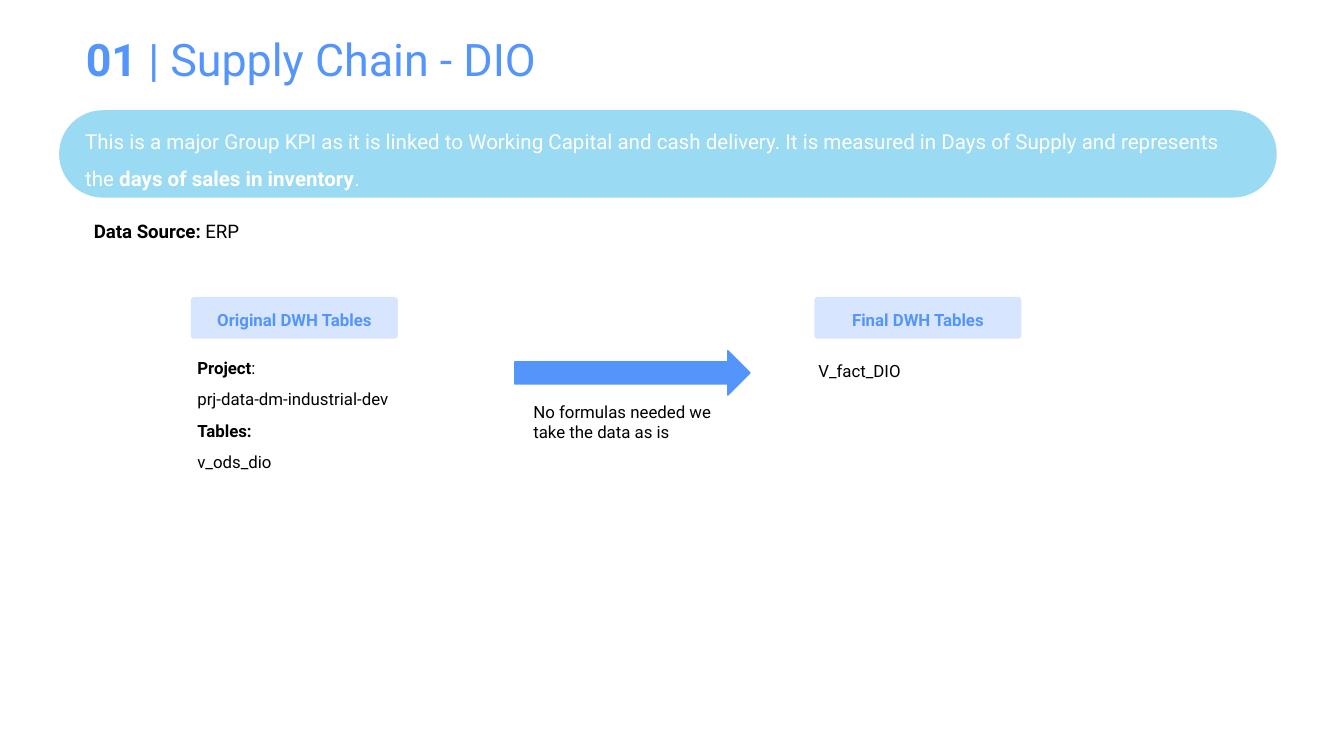
import pptx
import pptx.util
import pptx.dml.color
import pptx.enum.shapes
import pptx.enum.text
import pptx.oxml.ns
import lxml.etree
from pptx.util import Inches

BLUE, SKY, BLACK, WHITE = "5495FC", "81D1F0", "000000", "FFFFFF"
SHAPES = pptx.enum.shapes.MSO_SHAPE
MIDDLE = pptx.enum.text.MSO_ANCHOR.MIDDLE
ALIGN = pptx.enum.text.PP_ALIGN


def paint(color_format, color):
    """Set a colour from a hex string."""
    color_format.rgb = pptx.dml.color.RGBColor.from_string(color)


def write(box, paragraphs, size, color, inset=0.1, anchor=None, **layout):
    """Fill a box; each paragraph is a list of (text, bold) spans."""
    frame = box.text_frame
    frame_format = {"word_wrap": True, "vertical_anchor": anchor,
                    "margin_left": Inches(0.1), "margin_right": Inches(0.1),
                    "margin_top": Inches(inset), "margin_bottom": Inches(inset)}
    for name, value in frame_format.items():
        setattr(frame, name, value)
    for index, spans in enumerate(paragraphs):
        para = frame.add_paragraph() if index else frame.paragraphs[0]
        for name, value in layout.items():
            setattr(para, name, value)
        if index:
            para.space_before = pptx.util.Pt(6)
        for text, bold in spans:
            span = para.add_run()
            span.text = text
            font_format = {"name": "Roboto", "size": pptx.util.Pt(size), "bold": bold}
            for name, value in font_format.items():
                setattr(span.font, name, value)
            paint(span.font.color, color)


# A 16:9 page
deck = pptx.Presentation()
deck.slide_width = Inches(10)
deck.slide_height = deck.slide_width * 9 // 16
page = deck.slides.add_slide(deck.slide_layouts[6])

# Filled shapes: table headers, arrow and banner
shapes = {}
for name, kind, place, color, opacity, corner in [
    ("final", SHAPES.ROUNDED_RECTANGLE, (6.06, 2.21, 1.54, 0.31), BLUE, 23, 0.08),
    ("original", SHAPES.ROUNDED_RECTANGLE, (1.42, 2.21, 1.54, 0.31), BLUE, 23, 0.08),
    ("arrow", SHAPES.RIGHT_ARROW, (3.83, 2.61, 1.75, 0.33), BLUE, 100, 0.5),
    ("banner", SHAPES.ROUNDED_RECTANGLE, (0.44, 0.82, 9.06, 0.65), SKY, 80, 0.5),
]:
    shape = page.shapes.add_shape(kind, *map(Inches, place))
    shape.shadow.inherit = False
    shape.adjustments[0] = corner
    shape.fill.solid()
    paint(shape.fill.fore_color, color)
    if opacity < 100:
        fill_color = next(shape.element.spPr.iter(pptx.oxml.ns.qn("a:srgbClr")))
        alpha = lxml.etree.SubElement(fill_color, pptx.oxml.ns.qn("a:alpha"))
        alpha.set("val", str(opacity * 1000))
    shape.line.fill.background()
    shapes[name] = shape

arrow_line = shapes["arrow"].line
arrow_line.fill.solid()
paint(arrow_line.color, BLUE)
arrow_line.width = pptx.util.Pt(0.75)

# Text inside the shapes
for name, label in [("original", "Original DWH Tables"), ("final", "Final DWH Tables")]:
    write(shapes[name], [[(label, True)]], 9, BLUE, anchor=MIDDLE,
          alignment=ALIGN.CENTER, line_spacing=1.15)
banner_text = [
    ("This is a major Group KPI as it is linked to Working Capital and cash delivery. "
     "It is measured in Days of Supply and represents the ", False),
    ("days of sales in inventory", True),
    (".", False),
]
write(shapes["banner"], [banner_text], 11, WHITE, inset=0.05, anchor=MIDDLE,
      alignment=ALIGN.LEFT, line_spacing=1.5)

# Free text: title, data source, table names and note under the arrow
for place, paragraphs, size, color, anchor in [
    ((0.54, 0.11, 9.04, 0.65),
     [[("01 ", True), ("| Supply Chain - DIO", False)]], 24, BLUE, MIDDLE),
    ((0.6, 1.55, 1.84, 0.37),
     [[("Data Source: ", True), ("ERP", False)]], 10, BLACK, None),
    ((1.37, 2.56, 1.96, 1.06),
     [[("Project", True), (":", False)], [("prj-data-dm-industrial-dev", False)],
      [("Tables:", True)], [("v_ods_dio", False)]], 9, BLACK, None),
    ((3.87, 2.89, 1.75, 0.5),
     [[("No formulas needed we take the data as is", False)]], 9, BLACK, None),
    ((5.99, 2.61, 3.28, 0.35), [[("V_fact_DIO", False)]], 9, BLACK, None),
]:
    box = page.shapes.add_textbox(*map(Inches, place))
    write(box, paragraphs, size, color, anchor=anchor)

deck.save("out.pptx")
